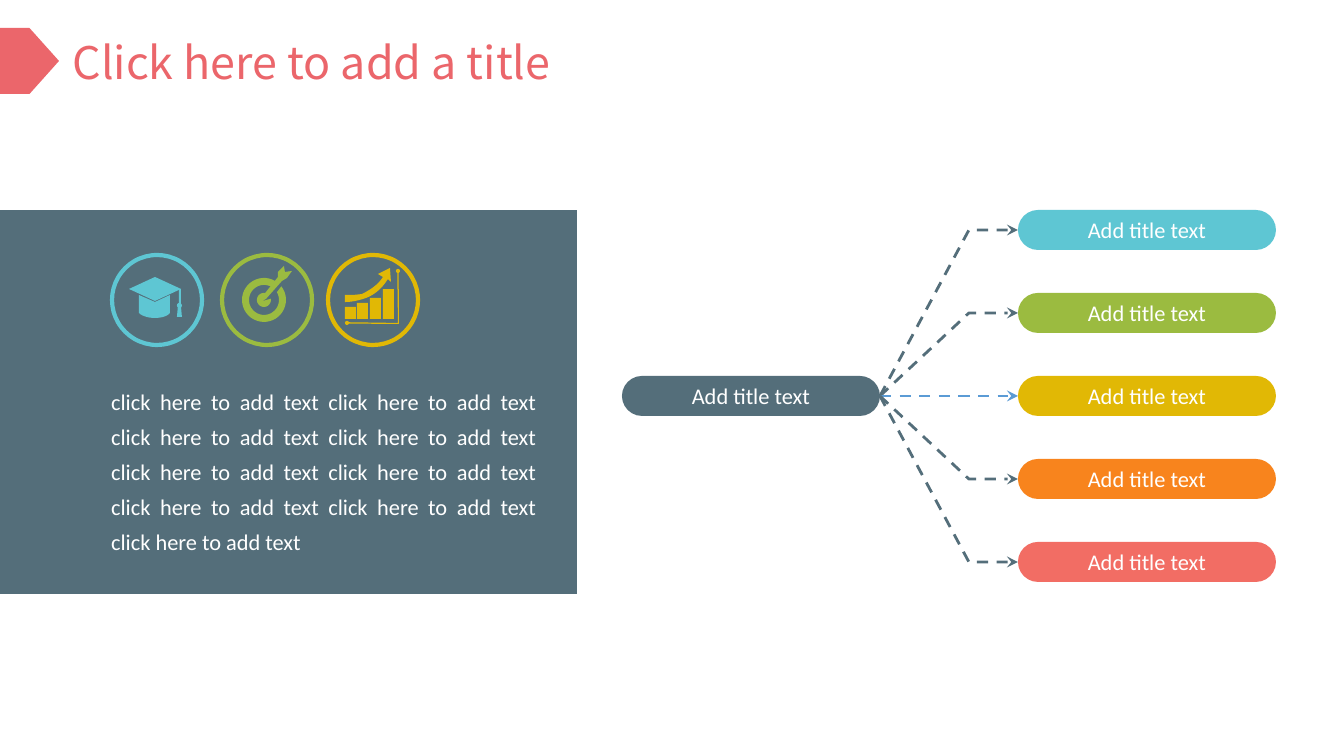
import math
from dataclasses import dataclass

from lxml import etree
from pptx import Presentation
from pptx import util as u
from pptx.dml.color import RGBColor
from pptx.enum import dml, shapes, text
from pptx.oxml import ns

PX = 914400 / 134.4


@dataclass(frozen=True)
class Theme:
    slate: str = "546E7A"
    coral: str = "EB666B"
    white: str = "FFFFFF"
    blue: str = "5B9BD5"
    cyan: str = "5EC6D3"
    green: str = "9BBB40"
    gold: str = "E1B805"
    orange: str = "F8841D"
    red: str = "F26D64"
    title_font: str = "Noto Sans CJK SC"
    body_font: str = "Calibri"
    title_size: int = 24
    body_size: int = 12
    ring: float = 2.25
    dash: float = 1.5


T = Theme()
SHAPE = shapes.MSO_SHAPE


def px(*values):
    return [u.Emu(round(v * PX)) for v in values]


def style_font(p, name, size, color):
    p.font.name, p.font.size = name, u.Pt(size)
    p.font.color.rgb = RGBColor.from_string(color)


def style_line(s, color, width):
    s.line.color.rgb = RGBColor.from_string(color)
    s.line.width = u.Pt(width)


def fill_only(s, color):
    s.shadow.inherit = False
    s.fill.solid()
    s.fill.fore_color.rgb = RGBColor.from_string(color)
    s.line.fill.background()
    return s


def add_block(sp, kind, box, color):
    return fill_only(sp.add_shape(kind, *px(*box)), color)


def add_outline(sp, x, y, points, close=True):
    emu = [px(x + dx, y + dy) for dx, dy in points]
    builder = sp.build_freeform(*emu[0], scale=1.0)
    builder.add_line_segments(emu[1:], close=close)
    return builder.convert_to_shape()


def add_solid(sp, x, y, points, color):
    return fill_only(add_outline(sp, x, y, points), color)


def arc(cx, cy, r, start, end, steps=40):
    angles = [math.radians(start + (end - start) * i / steps) for i in range(steps + 1)]
    return [(cx + r * math.cos(a), cy + r * math.sin(a)) for a in angles]


def curve(a, b, c, d, steps=8):
    ts = [i / steps for i in range(steps + 1)]
    return [tuple((1 - t) ** 3 * p + 3 * t * (1 - t) ** 2 * q
                  + 3 * t * t * (1 - t) * r + t ** 3 * s
                  for p, q, r, s in zip(a, b, c, d)) for t in ts]


def header(slide, x, y, w, h):
    add_block(slide.shapes, SHAPE.PENTAGON, (x, y, 59, h - 1), T.coral)
    s = slide.shapes.title
    s.left, s.top, s.width, s.height = px(x + 59, y, w - 59, h)
    tf = s.text_frame
    tf.text = "Click here to add a title"
    tf.word_wrap = False
    tf.auto_size = text.MSO_AUTO_SIZE.SHAPE_TO_FIT_TEXT
    tf.vertical_anchor = text.MSO_ANCHOR.TOP
    p = tf.paragraphs[0]
    p.alignment = text.PP_ALIGN.LEFT
    style_font(p, T.title_font, T.title_size, T.coral)


def cap_icon(sp, x, y, color):
    add_solid(sp, x, y, [(43, 22), (69, 34), (43, 46), (17, 34)], color)
    add_block(sp, SHAPE.RECTANGLE, (x + 67, y + 34, 2, 17), color)
    add_block(sp, SHAPE.OVAL, (x + 65, y + 48, 5, 5), color)
    add_solid(sp, x, y, [(66, 51), (65, 62), (70, 62), (69, 51)], color)
    bowl = curve((27, 58), (31, 62), (39, 63), (43, 63))
    bowl += curve((43, 63), (47, 63), (55, 62), (58, 58))
    add_solid(sp, x, y, [(58, 40), (43, 47), (27, 40)] + bowl, color)


def target_icon(sp, x, y, color):
    add_solid(sp, x, y, arc(42, 45, 7, -10, 305) + [(41, 46)], color)
    ring = arc(42, 45, 22, -38, 310) + arc(42, 45, 15, 310, -31)
    add_solid(sp, x, y, ring, color)
    dart = [(70, 16), (63, 17), (62, 11), (56, 17), (56, 22),
            (40, 42), (40, 46), (44, 44), (60, 26), (65, 23)]
    add_solid(sp, x, y, dart, color)


def growth_icon(sp, x, y, color):
    upper = curve((55, 22), (50, 30), (42, 35), (34, 39))
    upper += curve((34, 39), (27, 40), (22, 40), (17, 40))
    lower = curve((17, 47), (23, 47), (28, 46), (35, 44))
    lower += curve((35, 44), (45, 41), (53, 35), (60, 24))
    add_solid(sp, x, y, [(62, 13), (50, 19)] + upper + lower + [(63, 27)], color)
    for i, h in enumerate((12, 16, 21, 30)):
        add_block(sp, SHAPE.RECTANGLE, (x + 17 + i * 38 // 3, y + 64 - h, 11, h), color)
    axes = arc(70, 16, 2, 110, 430) + [(71, 69)]
    axes += arc(19, 68, 2, 20, 340) + [(70, 68)]
    add_solid(sp, x, y, axes, color)


def icon(slide, x, y, size, color, draw):
    sp = slide.shapes.add_group_shape().shapes
    s = sp.add_shape(SHAPE.OVAL, *px(x, y, size, size))
    s.shadow.inherit = False
    s.fill.background()
    style_line(s, color, T.ring)
    draw(sp, x, y, color)


def panel(slide, x, y, w, h):
    add_block(slide.shapes, SHAPE.RECTANGLE, (x, y, w, h), T.slate)
    icons = ((112, T.cyan, cap_icon), (222, T.green, target_icon),
             (328, T.gold, growth_icon))
    for dx, color, draw in icons:
        icon(slide, x + dx, y + 45, 90, color, draw)
    s = slide.shapes.add_textbox(*px(x + 98, y + 164, w - 125, 187))
    tf = s.text_frame
    tf.word_wrap = True
    tf.auto_size = text.MSO_AUTO_SIZE.SHAPE_TO_FIT_TEXT
    p = tf.paragraphs[0]
    p.text = " ".join(["click here to add text"] * 9)
    p.alignment = text.PP_ALIGN.JUSTIFY
    p.line_spacing = 1.3
    style_font(p, T.body_font, T.body_size, T.white)


def pill(slide, x, y, w, h, color):
    s = add_block(slide.shapes, SHAPE.ROUNDED_RECTANGLE, (x, y, w, h), color)
    s.adjustments[0] = 0.5
    tf = s.text_frame
    tf.vertical_anchor = text.MSO_ANCHOR.MIDDLE
    p = tf.paragraphs[0]
    p.text = "Add title text"
    p.alignment = text.PP_ALIGN.CENTER
    style_font(p, T.body_font, T.body_size, T.white)
    return s


def dash_arrow(s, color):
    style_line(s, color, T.dash)
    s.line.dash_style = dml.MSO_LINE.DASH
    ln = s.line._get_or_add_ln()
    etree.SubElement(ln, ns.qn("a:tailEnd"), type="stealth")


def branch_map(slide, x, y, w, h):
    pill_w, pill_h = 258, 40
    colors = (T.cyan, T.green, T.gold, T.orange, T.red)
    mid = len(colors) // 2
    pitch = (h - pill_h) // (len(colors) - 1)
    leaf_x = w - pill_w
    hub = pill(slide, x, y + mid * pitch, pill_w, pill_h, T.slate)
    hub_y = mid * pitch + pill_h // 2
    for i, color in enumerate(colors):
        leaf = pill(slide, x + leaf_x, y + i * pitch, pill_w, pill_h, color)
        if i == mid:
            s = slide.shapes.add_connector(shapes.MSO_CONNECTOR.STRAIGHT, 0, 0, 0, 0)
            s.begin_connect(hub, 3)
            s.end_connect(leaf, 1)
            etree.SubElement(s._element.spPr, ns.qn("a:effectLst"))
            dash_arrow(s, T.blue)
            continue
        leaf_y = i * pitch + pill_h // 2
        points = [(pill_w, hub_y), (leaf_x - 49, leaf_y), (leaf_x, leaf_y)]
        s = add_outline(slide.shapes, x, y, points, close=False)
        s.shadow.inherit = False
        s.fill.background()
        dash_arrow(s, T.slate)


def main():
    prs = Presentation()
    prs.slide_width, prs.slide_height = px(1344, 756)
    slide = prs.slides.add_slide(prs.slide_layouts[5])
    header(slide, 0, 28, 587, 67)
    panel(slide, 0, 210, 577, 384)
    branch_map(slide, 622, 210, 654, 372)
    prs.save("out.pptx")


if __name__ == "__main__":
    main()
